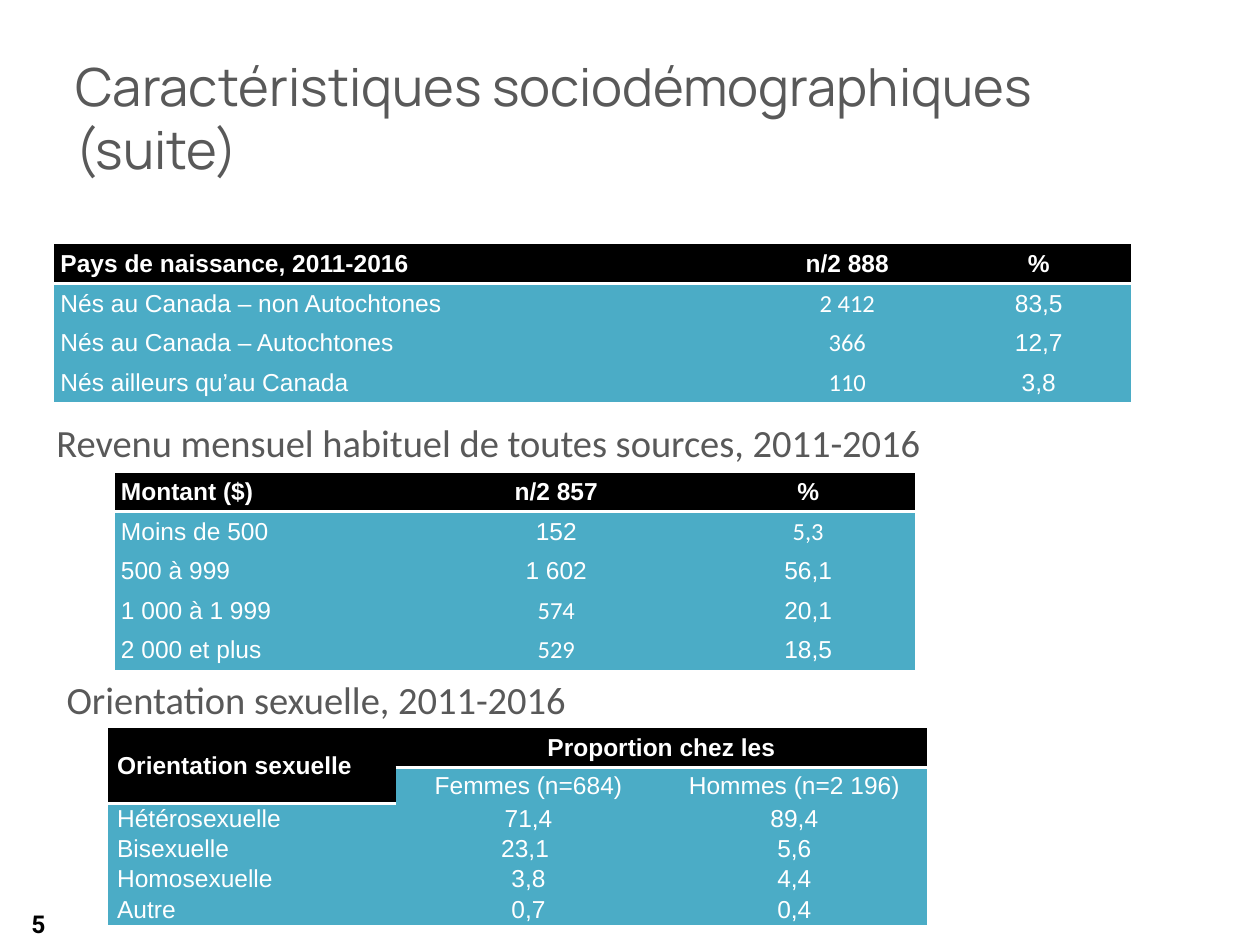
from lxml import etree
from pptx import Presentation
from pptx.dml.color import RGBColor
from pptx.enum.text import MSO_ANCHOR, PP_ALIGN
from pptx.oxml.ns import qn
from pptx.util import Inches, Pt

LEFT, CENTER, RIGHT = PP_ALIGN.LEFT, PP_ALIGN.CENTER, PP_ALIGN.RIGHT
TOP, MIDDLE = MSO_ANCHOR.TOP, MSO_ANCHOR.MIDDLE
BLACK = RGBColor(0x00, 0x00, 0x00)
WHITE = RGBColor(0xFF, 0xFF, 0xFF)
GREY = RGBColor(0x59, 0x59, 0x59)
TEAL = RGBColor(0x4B, 0xAC, 0xC6)
NO_STYLE = "{2D5ABB26-0587-4C30-8999-92F81FD0307C}"

prs = Presentation()
prs.slide_width, prs.slide_height = Inches(10), Inches(7.5)
COL, ROW = prs.slide_width / 100, prs.slide_height / 75
s = prs.slides.add_slide(prs.slide_layouts[6])


def write(tf, text, align, font, size, color, bold=False):
    p = tf.paragraphs[0]
    p.alignment = align
    r = p.add_run()
    r.text = text
    for key, value in {"name": font, "size": Pt(size), "bold": bold}.items():
        setattr(r.font, key, value)
    r.font.color.rgb = color


def underline(cell):
    tcPr = cell._tc.get_or_add_tcPr()
    ln = etree.Element(qn("a:lnB"), w=str(Pt(2)))
    fill = etree.SubElement(ln, qn("a:solidFill"))
    etree.SubElement(fill, qn("a:srgbClr"), val=str(WHITE))
    tcPr.insert(0, ln)


texts = [
    ("5", (0, 71.3, 4.6, 4), RIGHT, MIDDLE, True, "Roboto", 14, BLACK, True),
    ("Caractéristiques sociodémographiques (suite)", (5, 3, 90, 12.5),
     LEFT, MIDDLE, True, "Manrope", 30, GREY, False),
    ("Revenu mensuel habituel de toutes sources, 2011-2016", (3.5, 32.8, 71.4, 4.7),
     LEFT, TOP, False, "Calibri", 22, GREY, False),
    ("Orientation sexuelle, 2011-2016", (4.3, 53.2, 42.1, 4.7),
     LEFT, TOP, False, "Calibri", 22, GREY, False),
]
for text, (x, y, w, h), align, anchor, wrap, font, size, color, bold in texts:
    sp = s.shapes.add_textbox(int(x * COL), int(y * ROW), int(w * COL), int(h * ROW))
    tf = sp.text_frame
    tf.word_wrap = wrap
    tf.vertical_anchor = anchor
    write(tf, text, align, font, size, color, bold)

CALIBRI = {"2 412", "366", "110", "5,3", "574", "529"}
tables = [
    ((4.3, 19.4), (55.1, 15.7, 14.7), [3.13] * 4, 0.05, 0.04, [], [
        ("Pays de naissance, 2011-2016", "n/2 888", "%"),
        ("Nés au Canada – non Autochtones", "2 412", "83,5"),
        ("Nés au Canada – Autochtones", "366", "12,7"),
        ("Nés ailleurs qu’au Canada", "110", "3,8"),
    ]),
    ((9.1, 37.5), (23.5, 23.1, 16.9), [3.12] * 5, 0.05, 0.04, [], [
        ("Montant ($)", "n/2 857", "%"),
        ("Moins de 500", "152", "5,3"),
        ("500 à 999", "1 602", "56,1"),
        ("1 000 à 1 999", "574", "20,1"),
        ("2 000 et plus", "529", "18,5"),
    ]),
    ((8.6, 57.8), (22.8, 21.1, 21.1), [3.1, 2.9] + [2.4] * 4, 0.07, 0,
     [((0, 0), (1, 0)), ((0, 1), (0, 2))], [
        ("Orientation sexuelle", "Proportion chez les", ""),
        ("", "Femmes (n=684)", "Hommes (n=2 196)"),
        ("Hétérosexuelle", "71,4", "89,4"),
        ("Bisexuelle", "23,1 ", "5,6"),
        ("Homosexuelle", "3,8", "4,4"),
        ("Autre", "0,7", "0,4"),
    ]),
]
for (x, y), widths, heights, side, pad, merges, rows in tables:
    sp = s.shapes.add_table(len(rows), len(widths), int(x * COL), int(y * ROW),
                            int(sum(widths) * COL), int(sum(heights) * ROW))
    tbl = sp.table
    tbl._tbl.tblPr.find(qn("a:tableStyleId")).text = NO_STYLE
    tbl.horz_banding = False
    for column, w in zip(tbl.columns, widths):
        column.width = int(w * COL)
    for row, h in zip(tbl.rows, heights):
        row.height = int(h * ROW)
    for first, last in merges:
        tbl.cell(*first).merge(tbl.cell(*last))
    for i, values in enumerate(rows):
        for j, text in enumerate(values):
            cell = tbl.cell(i, j)
            header = i == 0 or (j == 0 and not text)
            edge = 0 if header else Inches(pad)
            layout = {"margin_left": Inches(side), "margin_right": Inches(side),
                      "margin_top": edge, "margin_bottom": edge, "vertical_anchor": MIDDLE}
            for key, value in layout.items():
                setattr(cell, key, value)
            cell.fill.solid()
            cell.fill.fore_color.rgb = BLACK if header else TEAL
            if header:
                underline(cell)
            if text:
                write(cell.text_frame, text, CENTER if j else LEFT,
                      "Calibri" if text in CALIBRI else "Arial", 14, WHITE, header)

prs.save("out.pptx")
